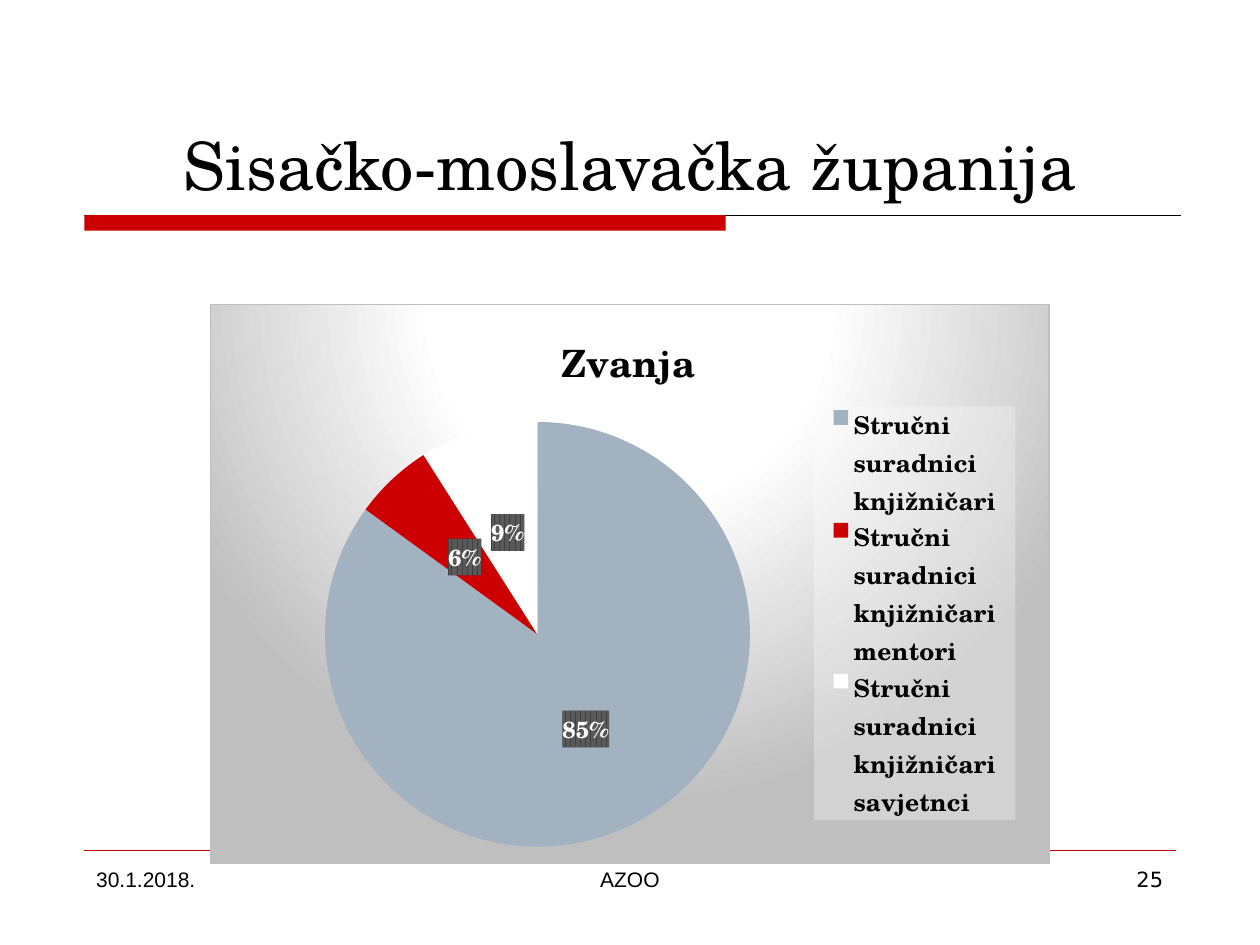
from pptx import Presentation
from pptx.chart.data import CategoryChartData
from pptx.dml.color import RGBColor
from pptx.enum.chart import XL_CHART_TYPE, XL_LABEL_POSITION, XL_LEGEND_POSITION
from pptx.enum.shapes import MSO_CONNECTOR, MSO_SHAPE
from pptx.enum.text import MSO_ANCHOR, MSO_AUTO_SIZE, PP_ALIGN
from pptx.oxml import parse_xml
from pptx.oxml.ns import nsdecls, qn
from pptx.util import Cm, Pt

PIE = XL_CHART_TYPE.PIE
LABEL_CENTER = XL_LABEL_POSITION.CENTER
LEGEND_RIGHT = XL_LEGEND_POSITION.RIGHT
STRAIGHT = MSO_CONNECTOR.STRAIGHT
RECTANGLE = MSO_SHAPE.RECTANGLE
BOTTOM, TOP = MSO_ANCHOR.BOTTOM, MSO_ANCHOR.TOP
NO_FIT = MSO_AUTO_SIZE.NONE
LEFT, CENTER, RIGHT = PP_ALIGN.LEFT, PP_ALIGN.CENTER, PP_ALIGN.RIGHT

SERIF, SANS, NUMBER_FONT = "TeX Gyre Schola", "Arial", "DejaVu Sans"
RED, BLACK, WHITE, GREY = "CC0000", "000000", "FFFFFF", "BFBFBF"

HEADING = "Sisačko-moslavačka županija"
HEADING_FRAME = (1.59, 0.85, 22.23, 3.39)
ACCENT_BAR = (1.7, 4.34, 12.93, 0.31)
RULES = [
    (1.7, 23.8, 4.34, BLACK, 0.75),
    (1.7, 23.71, 17.15, RED, 0.25),
]
FOOTERS = [
    ("30.1.2018.", 1.69, 5.5, LEFT, SANS),
    ("AZOO", 8.68, 8.04, CENTER, SANS),
    ("25", 18.2, 5.5, RIGHT, NUMBER_FONT),
]
FOOTER_TOP, FOOTER_HEIGHT = 17.34, 1.32

CHART_TITLE = "Zvanja"
CHART_FRAME = (4.23, 6.13, 16.93, 11.29)
RANKS = [
    ("Stručni suradnici knjižničari", 85, "A3B2C1"),
    ("Stručni suradnici knjižničari mentori", 6, RED),
    ("Stručni suradnici knjižničari savjetnci", 9, WHITE),
]
TITLE_LAYOUT = {"x": 0.41, "y": 0.03}
PLOT_LAYOUT = {"x": 0.13, "y": 0.21, "w": 0.52, "h": 0.76}
LEGEND_LAYOUT = {"x": 0.72, "y": 0.18, "w": 0.24, "h": 0.74}

BACKDROP = f"""<a:gradFill rotWithShape="1"><a:gsLst>
<a:gs pos="0"><a:srgbClr val="{WHITE}"/></a:gs>
<a:gs pos="39000"><a:srgbClr val="{WHITE}"/></a:gs>
<a:gs pos="100000"><a:srgbClr val="{GREY}"/></a:gs></a:gsLst>
<a:path path="circle"><a:fillToRect l="50000" t="-80000" r="50000" b="180000"/></a:path>
</a:gradFill><a:ln w="9525"><a:solidFill><a:srgbClr val="{GREY}"/></a:solidFill></a:ln>"""
LEGEND_VEIL = f"""<a:solidFill><a:srgbClr val="{WHITE}"><a:alpha val="30000"/></a:srgbClr>
</a:solidFill><a:ln><a:noFill/></a:ln>"""
LABEL_STRIPES = """<a:pattFill prst="dkVert"><a:fgClr><a:srgbClr val="595959"/></a:fgClr>
<a:bgClr><a:srgbClr val="404040"/></a:bgClr></a:pattFill><a:ln><a:noFill/></a:ln>"""


def color(value):
    return RGBColor.from_string(value)


def frame(values):
    return [Cm(value) for value in values]


def apply(target, values):
    for key, value in values.items():
        setattr(target, key, value)


def style_font(font, name, size, tint=BLACK, bold=False):
    apply(font, {"name": name, "size": Pt(size), "bold": bold})
    font.color.rgb = color(tint)


def style_chart_part(element, fill):
    properties = parse_xml(f'<c:spPr {nsdecls("c", "a")}>{fill}</c:spPr>')
    element.find(qn("c:txPr")).addprevious(properties)


def place_chart_part(element, box, before=None, inner=False):
    for old in element.findall(qn("c:layout")):
        element.remove(old)
    target = '<c:layoutTarget val="inner"/>' if inner else ""
    modes = '<c:xMode val="edge"/><c:yMode val="edge"/>'
    sizes = "".join(f'<c:{key} val="{value}"/>' for key, value in box.items())
    layout = parse_xml(
        f'<c:layout {nsdecls("c")}><c:manualLayout>{target}{modes}{sizes}'
        "</c:manualLayout></c:layout>"
    )
    if before is None:
        element.insert(0, layout)
    else:
        element.find(qn(before)).addprevious(layout)


def add_rule(slide, start, end, top, tint, width):
    rule = slide.shapes.add_connector(STRAIGHT, *frame((start, top, end, top)))
    rule.line.color.rgb = color(tint)
    rule.line.width = Pt(width)
    rule._element.spPr.append(parse_xml(f'<a:effectLst {nsdecls("a")}/>'))


def write(text_frame, text, align, anchor, font_name, size):
    apply(text_frame, {"text": text, "word_wrap": True, "auto_size": NO_FIT,
                       "vertical_anchor": anchor})
    paragraph = text_frame.paragraphs[0]
    paragraph.alignment = align
    style_font(paragraph.runs[0].font, font_name, size)


def add_ranks_chart(slide):
    data = CategoryChartData()
    data.categories = [name for name, _, _ in RANKS]
    data.add_series("Series 1", [share for _, share, _ in RANKS])
    chart = slide.shapes.add_chart(PIE, *frame(CHART_FRAME), data).chart
    style_font(chart.font, SANS, 10)
    style_chart_part(chart._chartSpace, BACKDROP)

    heading = chart.chart_title
    heading.text_frame.text = CHART_TITLE
    style_font(heading.text_frame.paragraphs[0].runs[0].font, SERIF, 21.6, bold=True)
    place_chart_part(heading._element, TITLE_LAYOUT, "c:overlay")

    chart.has_legend = True
    legend = chart.legend
    apply(legend, {"position": LEGEND_RIGHT, "include_in_layout": False})
    style_font(legend.font, SERIF, 14, bold=True)
    style_chart_part(legend._element, LEGEND_VEIL)
    place_chart_part(legend._element, LEGEND_LAYOUT, "c:overlay")
    place_chart_part(chart._chartSpace.chart.plotArea, PLOT_LAYOUT, inner=True)

    plot = chart.plots[0]
    plot.vary_by_categories = True
    shares = plot.series[0]
    for index, (_, _, tint) in enumerate(RANKS):
        fill = shares.points[index].format.fill
        fill.solid()
        fill.fore_color.rgb = color(tint)
    labels = shares.data_labels
    apply(labels, {"show_percentage": True, "show_value": False,
                   "position": LABEL_CENTER})
    style_font(labels.font, SERIF, 13.3, WHITE, True)
    style_chart_part(labels._element, LABEL_STRIPES)


def main():
    deck = Presentation()
    apply(deck, {"slide_width": Cm(25.4), "slide_height": Cm(19.05)})
    slide = deck.slides.add_slide(deck.slide_layouts[5])

    for rule in RULES:
        add_rule(slide, *rule)
    bar = slide.shapes.add_shape(RECTANGLE, *frame(ACCENT_BAR))
    bar.shadow.inherit = False
    bar.fill.solid()
    bar.fill.fore_color.rgb = color(RED)
    bar.line.fill.background()

    heading = slide.shapes.title
    apply(heading, dict(zip(("left", "top", "width", "height"), frame(HEADING_FRAME))))
    write(heading.text_frame, HEADING, CENTER, BOTTOM, SERIF, 38)

    add_ranks_chart(slide)

    for text, left, width, align, font_name in FOOTERS:
        footer = slide.shapes.add_textbox(*frame((left, FOOTER_TOP, width, FOOTER_HEIGHT)))
        write(footer.text_frame, text, align, TOP, font_name, 12)

    deck.save("out.pptx")


if __name__ == "__main__":
    main()
